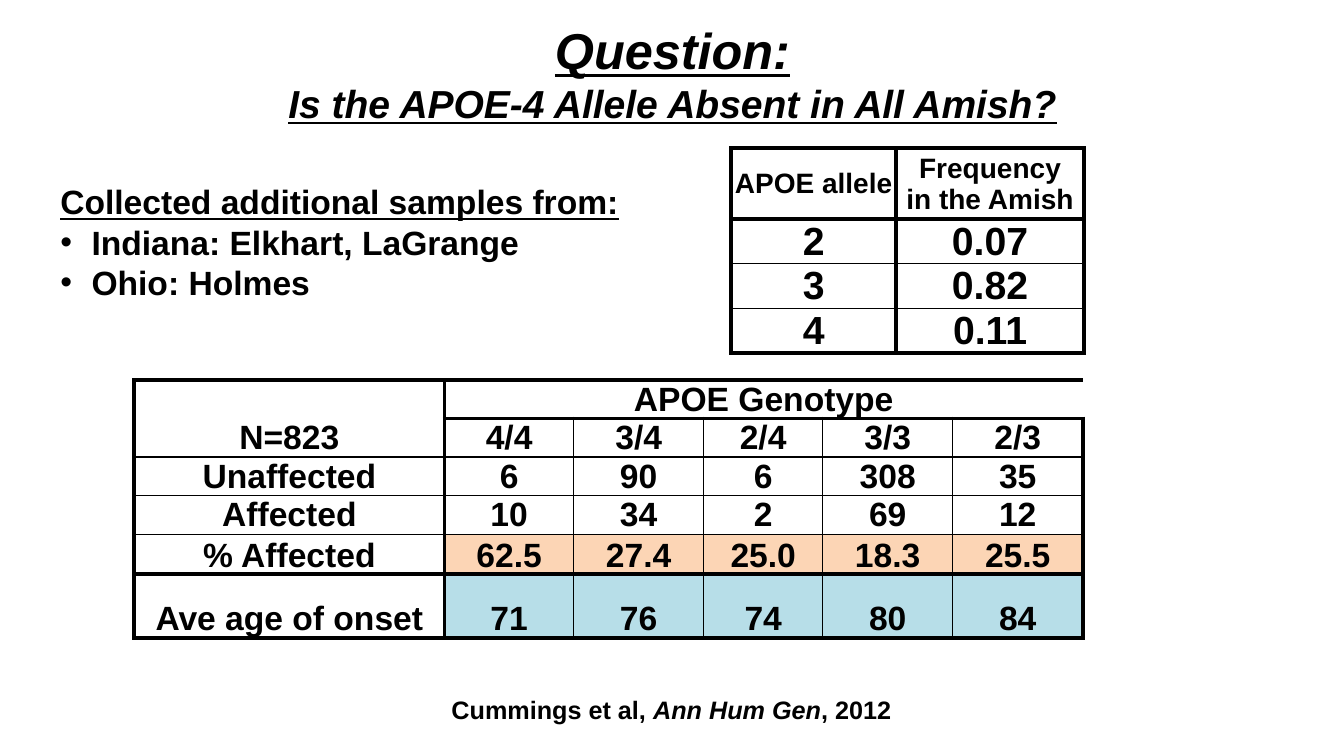
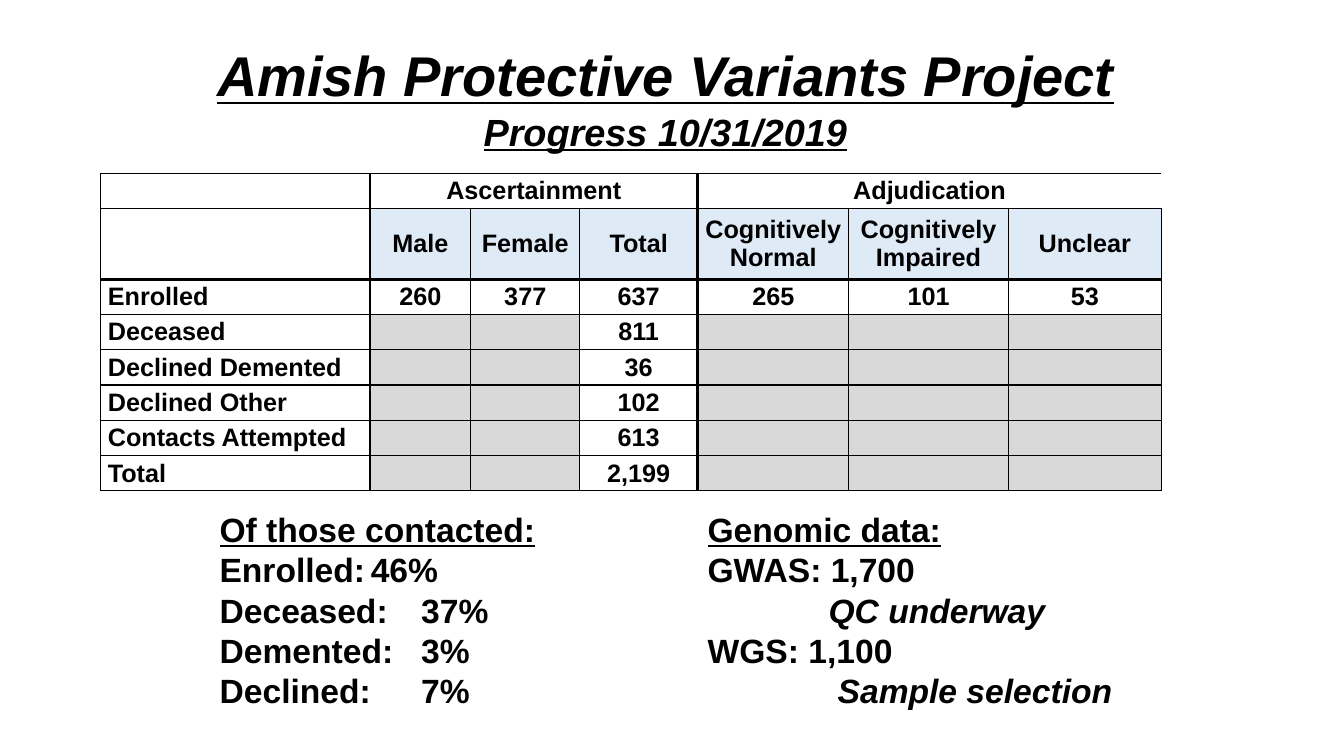
from dataclasses import dataclass

from lxml import etree
from pptx import Presentation
from pptx import util as u
from pptx.dml.color import RGBColor
from pptx.enum import text
from pptx.oxml import ns

Inches = u.Inches
CENTER, LEFT = text.PP_ALIGN.CENTER, text.PP_ALIGN.LEFT
MIDDLE, BOTTOM = text.MSO_ANCHOR.MIDDLE, text.MSO_ANCHOR.BOTTOM


@dataclass(frozen=True)
class Theme:
    font: str = "Arial"
    ink: str = "000000"
    paper: str = "FFFFFF"
    peach: str = "FCD5B5"
    aqua: str = "B7DEE8"
    header_blue: str = "DEEAF6"
    blank_gray: str = "D9D9D9"
    body: float = 24
    small: float = 18
    allele_head: float = 20
    allele_value: float = 28
    thick: float = 3
    medium: float = 2.25
    thin: float = 1
    hair: float = 0.5


THEME = Theme()


# Text
def add_text(paragraph, words, size=THEME.body, italic=False, underline=False):
    run = paragraph.add_run()
    run.text = words
    font = run.font
    font.name, font.size, font.bold = THEME.font, u.Pt(size), True
    font.italic, font.underline = italic, underline
    font.color.rgb = RGBColor.from_string(THEME.ink)


def set_layout(paragraph, indent=0, hanging=0, bullet=None, tab=None, tab_align="l"):
    props = paragraph._p.get_or_add_pPr()
    props.set("marL", str(Inches(indent)))
    props.set("indent", str(-Inches(hanging)))
    if bullet:
        etree.SubElement(props, ns.qn("a:buFont"), typeface=THEME.font)
        etree.SubElement(props, ns.qn("a:buChar"), char=bullet)
    if tab:
        stops = etree.SubElement(props, ns.qn("a:tabLst"))
        etree.SubElement(stops, ns.qn("a:tab"), pos=str(Inches(tab)), algn=tab_align)


def add_box(slide, left, top, width, height):
    frame = slide.shapes.add_textbox(*map(Inches, (left, top, width, height))).text_frame
    frame.word_wrap = True
    return frame


def add_list(slide, place, heading, items):
    """Underlined heading, then (text, run format, paragraph layout) items."""
    frame = add_box(slide, *place)
    add_text(frame.paragraphs[0], heading, underline=True)
    for words, run_format, layout in items:
        paragraph = frame.add_paragraph()
        set_layout(paragraph, **layout)
        add_text(paragraph, words, **run_format)


def add_titled_slide(deck, place, heading, subheading):
    slide = deck.slides.add_slide(deck.slide_layouts[5])
    title = slide.shapes.title
    title.left, title.top, title.width, title.height = map(Inches, place)
    frame = title.text_frame
    frame.auto_size = text.MSO_AUTO_SIZE.NONE
    frame.vertical_anchor = MIDDLE
    paragraph = frame.paragraphs[0]
    paragraph.alignment = CENTER
    for words, size in (heading, subheading):
        if paragraph.runs:
            paragraph.add_line_break()
        add_text(paragraph, words, size, italic=True, underline=True)
    return slide


# Tables
def set_border(cell, side, weight):
    line = etree.SubElement(cell._tc.get_or_add_tcPr(), ns.qn("a:ln" + side))
    if not weight:
        etree.SubElement(line, ns.qn("a:noFill"))
        return
    line.set("w", str(u.Pt(weight)))
    fill = etree.SubElement(line, ns.qn("a:solidFill"))
    etree.SubElement(fill, ns.qn("a:srgbClr"), val=THEME.ink)


def add_grid(slide, left, top, widths, heights, rows, column_rules, row_rules,
             merges=(), insets=(0.01, 0.01, 0.01, 0), size=lambda r: THEME.body,
             anchor=lambda r: BOTTOM, align=lambda c: CENTER,
             fill=lambda r, c: THEME.paper):
    """Table whose rule weights run left to right and top to bottom."""
    table = slide.shapes.add_table(
        len(heights), len(widths), Inches(left), Inches(top),
        Inches(sum(widths)), Inches(sum(heights))).table
    table.first_row = table.horz_banding = False
    for column, width in zip(table.columns, widths):
        column.width = Inches(width)
    for row, height in zip(table.rows, heights):
        row.height = Inches(height)

    owner = {}
    for r0, c0, r1, c1 in merges:
        table.cell(r0, c0).merge(table.cell(r1, c1))
        owner.update({(r, c): (r0, c0)
                      for r in range(r0, r1 + 1) for c in range(c0, c1 + 1)})

    for r, row in enumerate(rows):
        for c, words in enumerate(row):
            cell = table.cell(r, c)
            (cell.margin_left, cell.margin_top,
             cell.margin_right, cell.margin_bottom) = map(Inches, insets)
            cell.vertical_anchor = anchor(r)
            edges = (("L", (r, c - 1), column_rules[c]),
                     ("R", (r, c + 1), column_rules[c + 1]),
                     ("T", (r - 1, c), row_rules[r]),
                     ("B", (r + 1, c), row_rules[r + 1]))
            for side, neighbor, weight in edges:
                inside = (r, c) in owner and owner[r, c] == owner.get(neighbor)
                set_border(cell, side, 0 if inside else weight)
            cell.fill.solid()
            cell.fill.fore_color.rgb = RGBColor.from_string(fill(r, c))
            for i, line in enumerate(words.split("\n") if words else ()):
                paragraph = (cell.text_frame.add_paragraph() if i
                             else cell.text_frame.paragraphs[0])
                paragraph.alignment = align(c)
                add_text(paragraph, line, size(r))


# Slides
def build_question(deck):
    slide = add_titled_slide(
        deck, (2.17, 0.2, 9, 1.05), ("Question:", 36),
        ("Is the APOE-4 Allele Absent in All Amish?", 27.9))
    thick, thin, hair = THEME.thick, THEME.thin, THEME.hair

    # Genotype counts
    genotype_rows = [
        ["N=823", "APOE Genotype", "", "", "", ""],
        ["", "4/4", "3/4", "2/4", "3/3", "2/3"],
        ["Unaffected", "6", "90", "6", "308", "35"],
        ["Affected", "10", "34", "2", "69", "12"],
        ["% Affected", "62.5", "27.4", "25.0", "18.3", "25.5"],
        ["Ave age of onset", "71", "76", "74", "80", "84"],
    ]
    row_fills = {4: THEME.peach, 5: THEME.aqua}
    add_grid(
        slide, 1.33, 3.77, [3.08, 1.28, 1.29, 1.18, 1.29, 1.29],
        [0.38] * 4 + [0.4, 0.63], genotype_rows,
        column_rules=[thick, thick] + [hair] * 4 + [thick],
        row_rules=[thick, thick, thin, thin, hair, thick, thick],
        merges=[(0, 0, 1, 0), (0, 1, 0, 5)],
        fill=lambda r, c: row_fills.get(r, THEME.paper) if c else THEME.paper)

    # Allele frequencies
    add_grid(
        slide, 7.25, 1.47, [1.64, 1.86], [0.7] + [0.44] * 3,
        [["APOE allele", "Frequency\nin the Amish"],
         ["2", "0.07"], ["3", "0.82"], ["4", "0.11"]],
        column_rules=[thick] * 3, row_rules=[thick, thick, hair, hair, thick],
        size=lambda r: THEME.allele_value if r else THEME.allele_head,
        anchor=lambda r: BOTTOM if r else MIDDLE)

    # Sample sites and citation
    bulleted = dict(indent=0.31, hanging=0.31, bullet="•")
    add_list(slide, (0.5, 1.75, 5.8, 1.31), "Collected additional samples from:",
             [(site, {}, bulleted)
              for site in ("Indiana: Elkhart, LaGrange", "Ohio: Holmes")])
    citation = add_box(slide, 4.38, 6.84, 4.7, 0.42).paragraphs[0]
    for words, italic in (("Cummings et al, ", False), ("Ann Hum Gen", True),
                          (", 2012", False)):
        add_text(citation, words, THEME.small, italic=italic)


def build_progress(deck):
    slide = add_titled_slide(
        deck, (0.6, 0.34, 12, 1.25), ("Amish Protective Variants Project", 40),
        ("Progress 10/31/2019", 27))
    medium, thin = THEME.medium, THEME.thin

    # Enrollment progress
    totals = [("Deceased", "811"), ("Declined Demented", "36"),
              ("Declined Other", "102"), ("Contacts Attempted", "613"),
              ("Total", "2,199")]
    progress_rows = [
        ["", "Ascertainment", "", "", "Adjudication", "", ""],
        ["", "Male", "Female", "Total", "Cognitively Normal",
         "Cognitively Impaired", "Unclear"],
        ["Enrolled", "260", "377", "637", "265", "101", "53"],
    ] + [[status, "", "", total, "", "", ""] for status, total in totals]

    def progress_fill(r, c):
        if r == 1 and c:
            return THEME.header_blue
        if r > 2 and c not in (0, 3):
            return THEME.blank_gray
        return THEME.paper

    add_grid(
        slide, 1, 1.72, [2.67, 1, 1.08, 1.17, 1.5, 1.58, 1.52],
        [0.35, 0.7] + [0.35] * 6, progress_rows,
        column_rules=[thin, medium, thin, thin, medium, thin, thin, thin],
        row_rules=[thin, thin, medium] + [thin] * 6,
        merges=[(0, 1, 0, 3), (0, 4, 0, 6)], insets=(0.07, 0, 0.07, 0),
        size=lambda r: THEME.small, anchor=lambda r: MIDDLE,
        align=lambda c: CENTER if c else LEFT, fill=progress_fill)

    # Contact outcomes and genomic data
    outcomes = [("Enrolled:", "46%"), ("Deceased:", "37%"),
                ("Demented:", "3%"), ("Declined:", "7%")]
    add_list(slide, (2.08, 5, 3.4, 2.12), "Of those contacted:",
             [(f"{outcome}\t{share}", {}, dict(tab=2.67, tab_align="r"))
              for outcome, share in outcomes])
    italic = dict(italic=True)
    add_list(slide, (6.92, 5, 4.4, 2.12), "Genomic data:", [
        ("GWAS: 1,700", {}, {}),
        ("QC underway", italic, dict(indent=1.2)),
        ("WGS:\t1,100", {}, dict(tab=1.27)),
        ("Sample selection", italic, dict(indent=1.29)),
    ])


def main():
    deck = Presentation()
    deck.slide_width, deck.slide_height = Inches(13.33), Inches(7.5)
    build_question(deck)
    build_progress(deck)
    deck.save("out.pptx")


if __name__ == "__main__":
    main()
